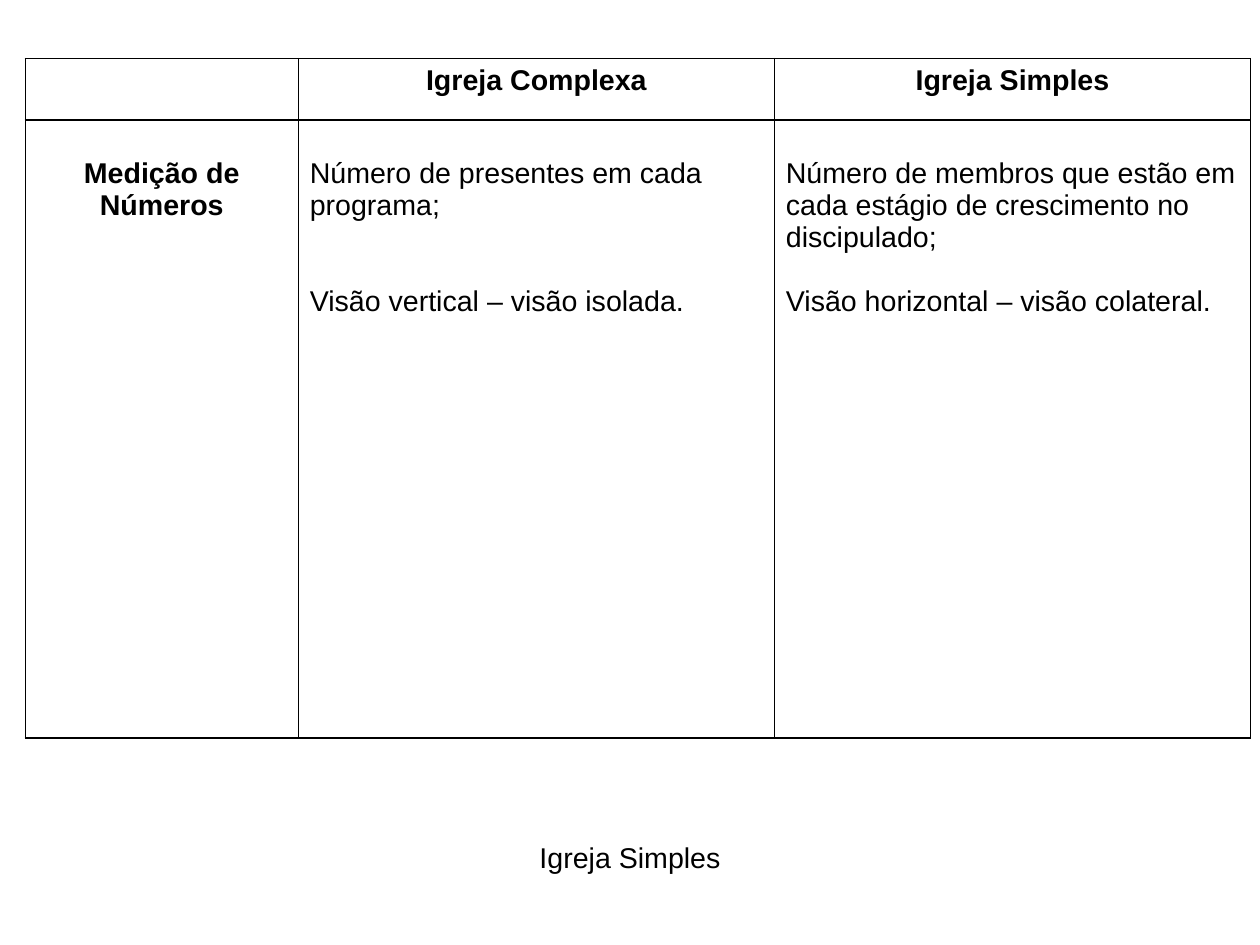
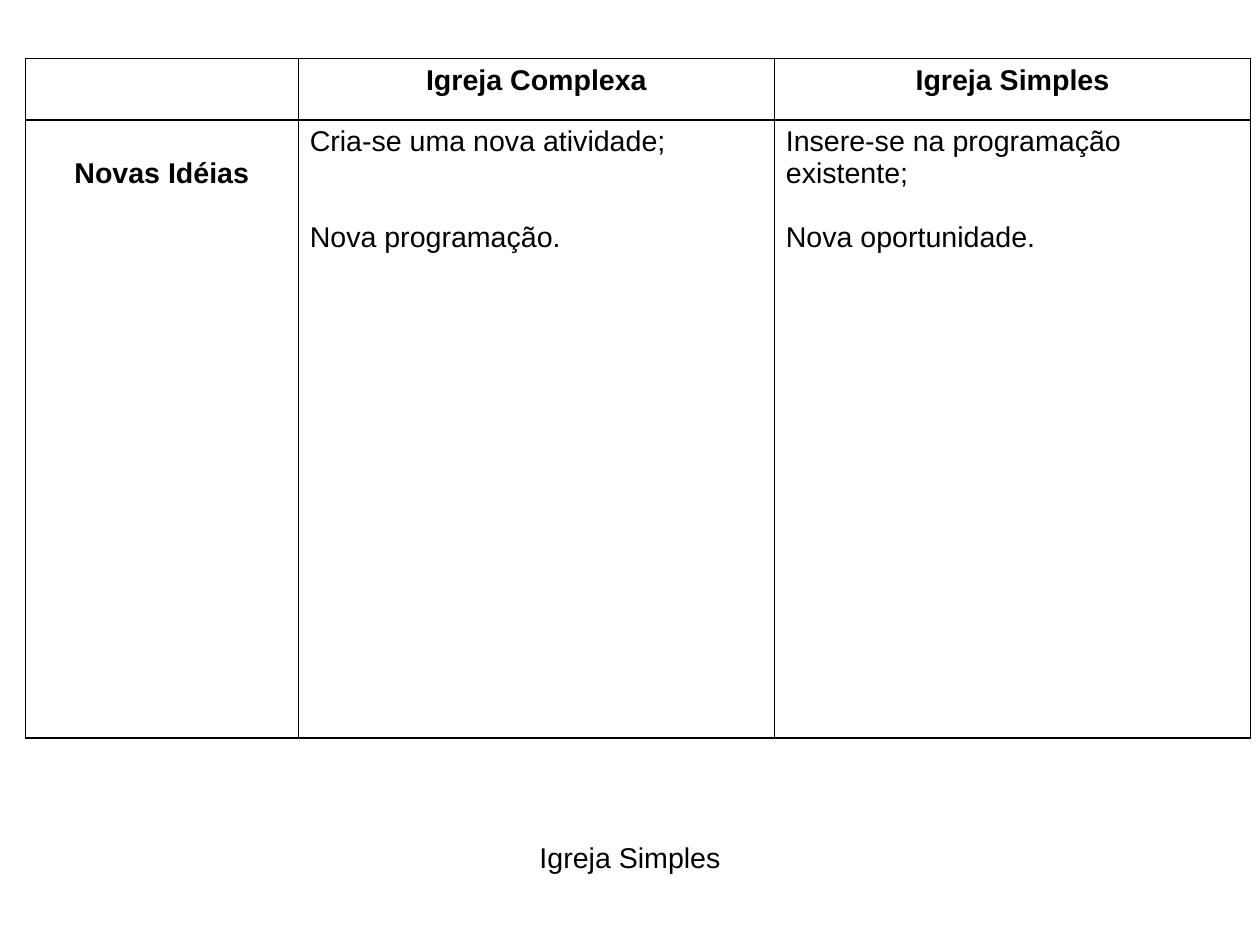
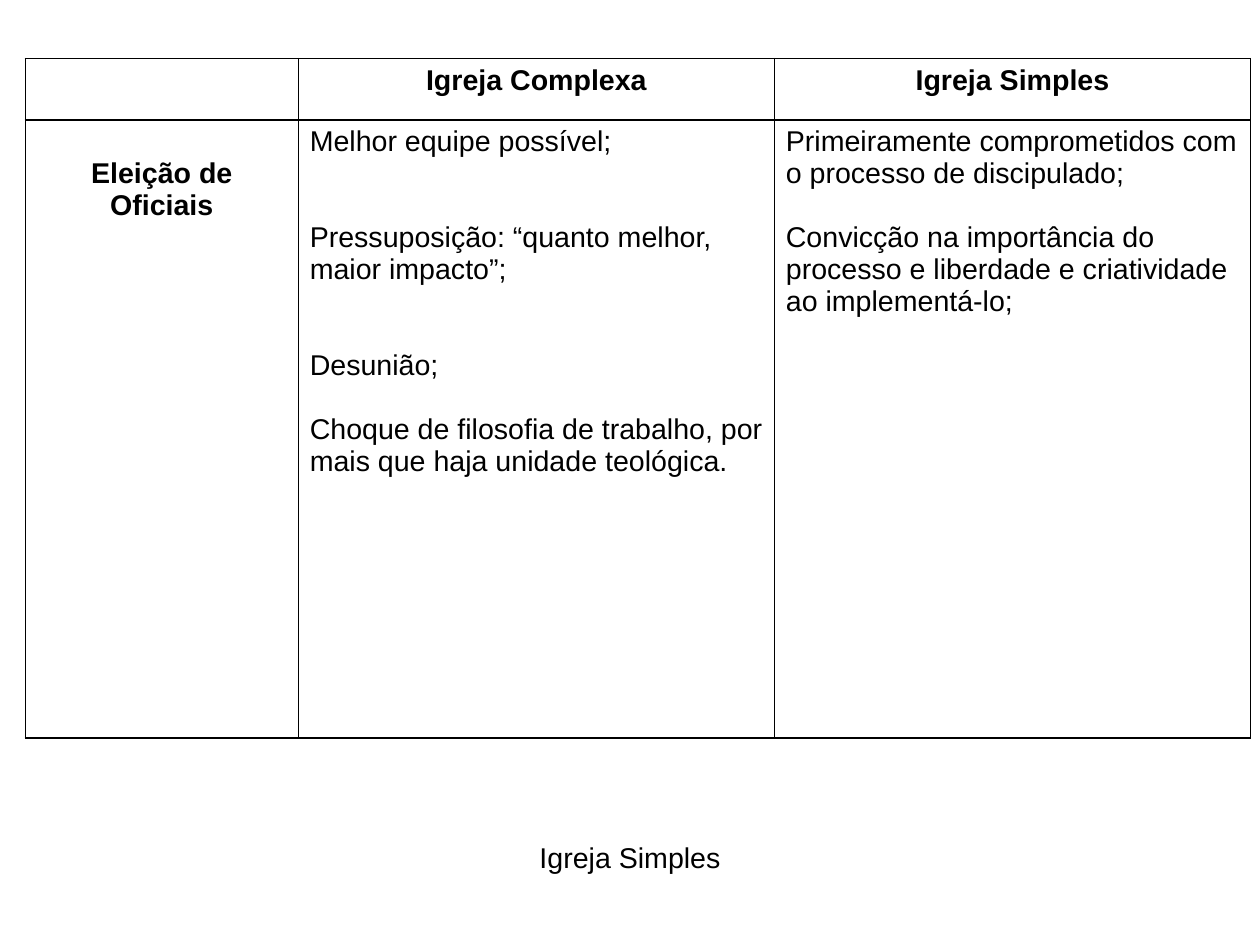
from lxml.etree import SubElement
from pptx import Presentation
from pptx.dml.color import RGBColor
from pptx.enum.text import MSO_ANCHOR, PP_ALIGN
from pptx.oxml.ns import qn
from pptx.util import Cm, Pt

BLACK = RGBColor(0x00, 0x00, 0x00)
FONT = "Arial"
SIZE = Pt(18)
LINE = Pt(20.1)
BORDER = Pt(1)
CELL_TOP = Cm(0.13)
COLUMNS = [Cm(6.07), Cm(10.58), Cm(10.58)]
ROWS = [Cm(1.37), Cm(13.73)]
HEADERS = ["", "Igreja Complexa", "Igreja Simples"]

# Each body cell lists its paragraphs as (lines of space above, text).
COMPARISONS = [
    [
        [(1, "Medição de Números")],
        [(1, "Número de presentes em cada programa;"),
         (2, "Visão vertical – visão isolada.")],
        [(1, "Número de membros que estão em cada estágio de crescimento no discipulado;"),
         (1, "Visão horizontal – visão colateral.")],
    ],
    [
        [(1, "Novas Idéias")],
        [(0, "Cria-se uma nova atividade;"),
         (2, "Nova programação.")],
        [(0, "Insere-se na programação existente;"),
         (1, "Nova oportunidade.")],
    ],
    [
        [(1, "Eleição de Oficiais")],
        [(0, "Melhor equipe possível;"),
         (2, "Pressuposição: “quanto melhor, maior impacto”;"),
         (2, "Desunião;"),
         (1, "Choque de filosofia de trabalho, por mais que haja unidade teológica.")],
        [(0, "Primeiramente comprometidos com o processo de discipulado;"),
         (1, "Convicção na importância do processo e liberdade e criatividade ao implementá-lo;")],
    ],
]


def add_span(para, text, bold=False):
    span = para.add_run()
    span.text = text
    span.font.name = FONT
    span.font.size = SIZE
    span.font.bold = bold
    span.font.color.rgb = BLACK


def fill_cell(cell, paragraphs, heading):
    """Border the cell and write its paragraphs; headings are bold and centred."""
    properties = cell._tc.get_or_add_tcPr()
    for side in ("a:lnL", "a:lnR", "a:lnT", "a:lnB"):
        line = SubElement(properties, qn(side), w=str(BORDER))
        SubElement(SubElement(line, qn("a:solidFill")), qn("a:srgbClr"), val=str(BLACK))
    cell.fill.background()
    cell.margin_top = CELL_TOP + paragraphs[0][0] * LINE
    for index, (gap, text) in enumerate(paragraphs):
        if index == 0:
            para = cell.text_frame.paragraphs[0]
        else:
            para = cell.text_frame.add_paragraph()
            para.space_before = gap * LINE
        para.alignment = PP_ALIGN.CENTER if heading else PP_ALIGN.LEFT
        if text:
            add_span(para, text, heading)


deck = Presentation()
deck.slide_width = Cm(28)
deck.slide_height = Cm(21)
title_only = deck.slide_layouts[5]

for body in COMPARISONS:
    page = deck.slides.add_slide(title_only)

    title = page.shapes.title
    title.left, title.top = Cm(1.4), Cm(17.29)
    title.width, title.height = Cm(25.2), Cm(3.5)
    frame = title.text_frame
    frame.margin_left = frame.margin_right = frame.margin_top = frame.margin_bottom = 0
    frame.vertical_anchor = MSO_ANCHOR.MIDDLE
    frame.paragraphs[0].alignment = PP_ALIGN.CENTER
    add_span(frame.paragraphs[0], "Igreja Simples")

    table = page.shapes.add_table(
        len(ROWS), len(COLUMNS), Cm(0.56), Cm(1.3), sum(COLUMNS), sum(ROWS)
    ).table
    table.first_row = table.horz_banding = False
    for column, width in zip(table.columns, COLUMNS):
        column.width = width
    for row, height in zip(table.rows, ROWS):
        row.height = height
    for column, (header, paragraphs) in enumerate(zip(HEADERS, body)):
        fill_cell(table.cell(0, column), [(0, header)], heading=True)
        fill_cell(table.cell(1, column), paragraphs, heading=column == 0)

deck.save("out.pptx")
